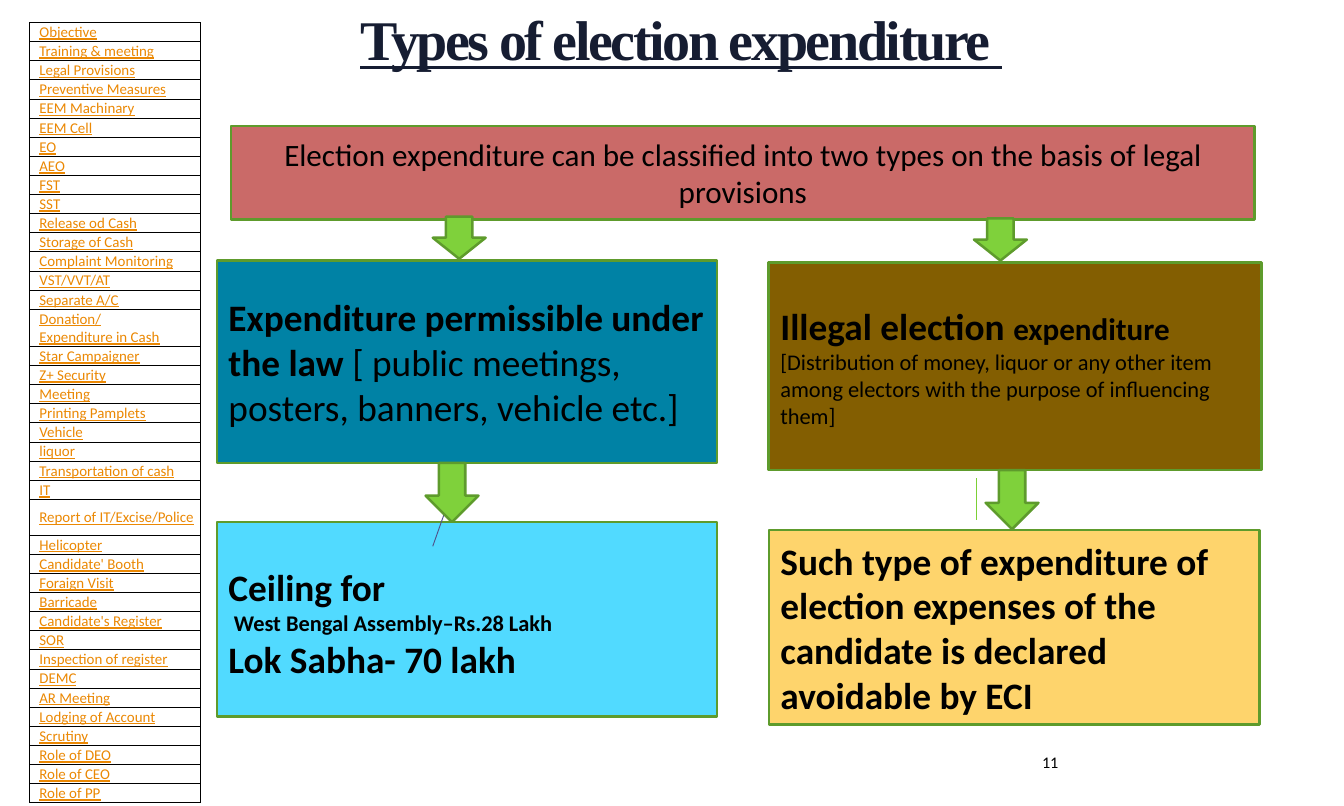
from dataclasses import dataclass
from lxml.etree import SubElement
from pptx import Presentation
from pptx.dml.color import RGBColor
from pptx.enum.shapes import MSO_CONNECTOR as Connector, MSO_SHAPE as Shape
from pptx.enum.text import MSO_ANCHOR as Anchor, MSO_AUTO_SIZE as AutoSize, PP_ALIGN as Align
from pptx.oxml.ns import qn
from pptx.util import Inches, Pt


@dataclass(frozen=True)
class Theme:
    body_font: str = "Calibri"
    title_font: str = "Times New Roman"
    ink: str = "000000"
    title: str = "161D32"
    link: str = "EB8803"
    outline: str = "5E9B2C"
    arrow: str = "7FD13B"
    title_size: int = 45
    heading_size: int = 30
    medium_size: int = 25
    small_size: int = 18
    number_size: int = 13
    menu_size: int = 12


THEME = Theme()
HEADING, MEDIUM, SMALL = THEME.heading_size, THEME.medium_size, THEME.small_size

TITLE = "Types of election expenditure "
PAGE_NUMBER = "11"
MENU = [
    "Objective", "Training & meeting", "Legal Provisions", "Preventive Measures",
    "EEM Machinary", "EEM Cell", "EO", "AEO", "FST", "SST", "Release od Cash",
    "Storage of Cash", "Complaint Monitoring", "VST/VVT/AT", "Separate A/C",
    "Donation/\vExpenditure in Cash", "Star Campaigner", "Z+ Security", "Meeting",
    "Printing Pamplets", "Vehicle", "liquor", "Transportation of cash", "IT",
    "Report of IT/Excise/Police", "Helicopter", "Candidate' Booth", "Foraign Visit",
    "Barricade", "Candidate's Register", "SOR", "Inspection of register", "DEMC",
    "AR Meeting", "Lodging of Account", "Scrutiny", "Role of DEO", "Role of CEO",
    "Role of PP",
]
ROW_HEIGHT = 0.21
TALL_ROWS = {"Donation/\vExpenditure in Cash": 0.41, "Report of IT/Excise/Police": 0.4}

BOXES = [
    dict(at=(2.42, 2.91, 5.58, 2.26), color="0082A5", paragraphs=[
        [("Expenditure permissible under the law ", HEADING, True),
         ("[ public meetings, posters, banners, vehicle etc.]", HEADING, False)]]),
    dict(at=(8.58, 2.93, 5.5, 2.32), color="835E01", paragraphs=[
        [("Illegal election ", HEADING, True), ("expenditure ", MEDIUM, True),
         ("[Distribution of money, liquor or any other item among electors "
          "with the purpose of influencing them]", SMALL, False)]]),
    dict(at=(2.42, 5.83, 5.58, 2.17), color="51DAFF", top_inset=0.14, indents={1: 0.06},
         paragraphs=[
             [("Ceiling for", HEADING, True)],
             [("West Bengal Assembly–Rs.28 Lakh", SMALL, True)],
             [("Lok Sabha- 70 lakh", HEADING, True)]]),
    dict(at=(8.58, 5.92, 5.48, 2.17), color="FED46C", paragraphs=[
        [("Such type of expenditure of election expenses of the candidate "
          "is declared avoidable by ECI", HEADING, True)]]),
    dict(at=(2.58, 1.41, 11.42, 1.04), color="CA6A68", align=Align.CENTER, paragraphs=[
        [("Election expenditure can be classified into two types on the basis "
          "of legal provisions", MEDIUM, False)]]),
]
STROKES = [
    ((5.13, 5.25), (4.83, 6.1), "505188"),
    ((10.9, 5.34), (10.9, 5.81), "7CD036"),
]
ARROW_WIDTH = 0.59
ARROWS = [(4.75, 5.17, 0.66), (11, 5.25, 0.66), (4.83, 2.42, 0.47), (10.87, 2.44, 0.47)]


def rgb(color):
    return RGBColor.from_string(color)


def style(run, size, color=THEME.ink, bold=False, underline=False, font=THEME.body_font):
    run.font.name = font
    run.font.size = Pt(size)
    run.font.bold = bold
    run.font.underline = underline
    run.font.color.rgb = rgb(color)


def set_insets(frame, top=0.06):
    frame.word_wrap = True
    frame.margin_left = frame.margin_right = Inches(0.13)
    frame.margin_top = Inches(top)
    frame.margin_bottom = Inches(0.06)


def add_title(slide):
    title = slide.shapes.title
    title.left, title.top, title.width, title.height = map(Inches, (3.92, 0.09, 11.08, 1.05))
    frame = title.text_frame
    frame.text = TITLE
    frame.auto_size = AutoSize.NONE
    frame.vertical_anchor = Anchor.TOP
    heading = frame.paragraphs[0]
    heading.alignment = Align.LEFT
    heading.line_spacing = 0.9
    for run in heading.runs:
        style(run, THEME.title_size, THEME.title, True, True, THEME.title_font)
        run.font._element.set("spc", "-190")


def add_borders(cell):
    properties = cell._tc.get_or_add_tcPr()
    for side in ("a:lnL", "a:lnR", "a:lnT", "a:lnB"):
        border = SubElement(properties, qn(side), w=str(Pt(0.5)))
        SubElement(SubElement(border, qn("a:solidFill")), qn("a:srgbClr"), val=THEME.ink)


def add_menu(slide):
    heights = [TALL_ROWS.get(entry, ROW_HEIGHT) for entry in MENU]
    menu = slide.shapes.add_table(len(MENU), 1, Inches(0.33), Inches(0.25),
                                  Inches(1.91), Inches(sum(heights))).table
    menu.first_row = menu.horz_banding = False
    for row, entry, height in zip(menu.rows, MENU, heights):
        row.height = Inches(height)
        cell = row.cells[0]
        add_borders(cell)
        cell.fill.background()
        cell.vertical_anchor = Anchor.MIDDLE
        cell.margin_left = cell.margin_top = cell.margin_right = Inches(0.01)
        cell.margin_bottom = 0
        cell.text_frame.text = entry
        line = cell.text_frame.paragraphs[0]
        line._p.get_or_add_pPr().set("marL", str(Inches(0.1)))
        for run in line.runs:
            style(run, THEME.menu_size, THEME.link, underline=True)


def add_block(slide, preset, at, color):
    block = slide.shapes.add_shape(preset, *map(Inches, at))
    block.shadow.inherit = False
    block.fill.solid()
    block.fill.fore_color.rgb = rgb(color)
    block.line.color.rgb = rgb(THEME.outline)
    block.line.width = Pt(2)
    return block


def add_box(slide, at, color, paragraphs, align=Align.LEFT, top_inset=0.06, indents={}):
    frame = add_block(slide, Shape.RECTANGLE, at, color).text_frame
    set_insets(frame, top_inset)
    frame.vertical_anchor = Anchor.MIDDLE
    for index, parts in enumerate(paragraphs):
        paragraph = frame.add_paragraph() if index else frame.paragraphs[0]
        paragraph.alignment = align
        if index in indents:
            paragraph._p.get_or_add_pPr().set("marL", str(Inches(indents[index])))
        for words, size, bold in parts:
            run = paragraph.add_run()
            run.text = words
            style(run, size, bold=bold)


def add_stroke(slide, start, end, color):
    stroke = slide.shapes.add_connector(Connector.STRAIGHT, *map(Inches, start + end))
    stroke.line.color.rgb = rgb(color)
    stroke.line.width = Pt(0.75)
    SubElement(stroke._element.spPr, qn("a:effectLst"))


def add_page_number(slide):
    frame = slide.shapes.add_textbox(*map(Inches, (11.5, 8.34, 3.5, 0.48))).text_frame
    set_insets(frame)
    frame.text = PAGE_NUMBER
    style(frame.paragraphs[0].runs[0], THEME.number_size)


def main():
    deck = Presentation()
    deck.slide_width, deck.slide_height = Inches(15), Inches(9)
    slide = deck.slides.add_slide(deck.slide_layouts[5])
    add_menu(slide)
    add_title(slide)
    add_page_number(slide)
    for box in BOXES:
        add_box(slide, **box)
    for start, end, color in STROKES:
        add_stroke(slide, start, end, color)
    for left, top, height in ARROWS:
        add_block(slide, Shape.DOWN_ARROW, (left, top, ARROW_WIDTH, height), THEME.arrow)
    deck.save("out.pptx")


if __name__ == "__main__":
    main()
